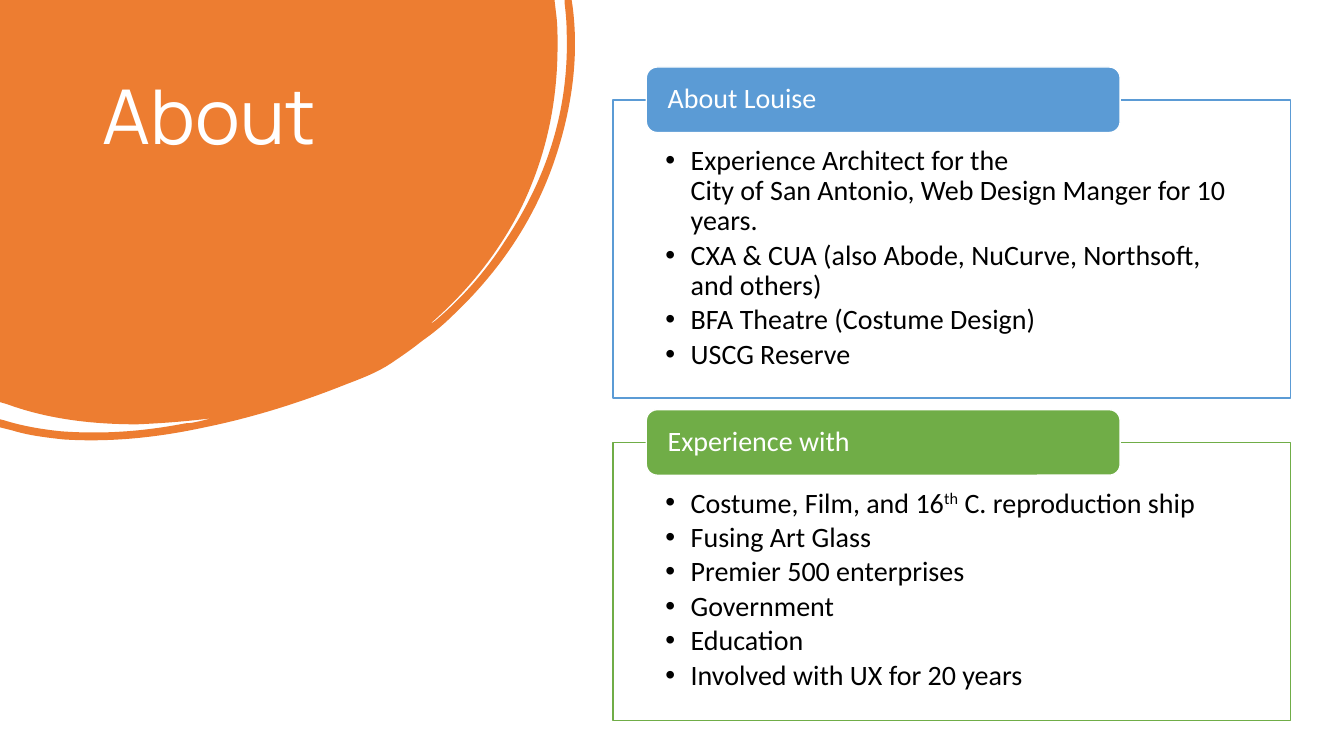
from lxml import etree
from pptx import Presentation
from pptx import util as u
from pptx.dml.color import RGBColor
from pptx.enum import shapes, text
from pptx.oxml import ns

WIDE, HIGH = u.Inches(13.33), u.Inches(7.5)
WHITE, BLACK, ORANGE, BLUE, GREEN = "FFFFFF", "000000", "ED7D31", "5B9BD5", "70AD47"
CARD_LEFT, CARD_WIDE = 45.61, 50.41
TAB_LEFT, TAB_WIDE, TAB_HIGH = 48.09, 35.26, 8.67

CARDS = [
    ("About Louise", BLUE, 13.2, 39.47, [
        "Experience Architect for the \vCity of San Antonio, Web Design Manger for 10 years.",
        "CXA & CUA (also Abode, NuCurve, Northsoft, and others)",
        "BFA Theatre (Costume Design)",
        "USCG Reserve",
    ]),
    ("Experience with", GREEN, 58.53, 36.8, [
        "Costume, Film, and 16^th^ C. reproduction ship",
        "Fusing Art Glass",
        "Premier 500 enterprises",
        "Government",
        "Education",
        "Involved with UX for 20 years",
    ]),
]

BLOB = [
    (0, 0), (5.5, 0), (5.52, 0.17),
    (5.53, 0.26, 5.53, 0.36, 5.53, 0.45),
    (5.53, 1.01, 5.42, 1.54, 5.18, 2.04),
    (4.96, 2.49, 4.65, 2.88, 4.27, 3.21),
    (4.29, 3.21, 4.3, 3.19, 4.32, 3.18),
    (4.59, 2.95, 4.82, 2.69, 5.01, 2.39),
    (5.43, 1.76, 5.65, 1.07, 5.62, 0.3),
    (5.62, 0.21, 5.61, 0.12, 5.6, 0.03),
    (5.6, 0), (5.67, 0), (5.68, 0.07),
    (5.74, 0.54, 5.68, 1.02, 5.53, 1.5),
    (5.33, 2.14, 4.97, 2.68, 4.48, 3.14),
    (4.39, 3.23, 4.29, 3.31, 4.19, 3.38),
    (4.09, 3.46, 3.99, 3.53, 3.87, 3.61),
    (3.75, 3.69, 3.6, 3.75, 3.44, 3.81),
    (2.99, 3.99, 2.52, 4.14, 2.03, 4.24),
    (1.57, 4.34, 1.1, 4.39, 0.63, 4.36),
    (0.45, 4.34, 0.28, 4.32, 0.12, 4.27),
    (0, 4.24), (0, 4.16), (0.04, 4.17),
    (0.23, 4.23, 0.42, 4.26, 0.61, 4.28),
    (1.03, 4.31, 1.43, 4.28, 1.84, 4.2),
    (1.89, 4.2, 1.93, 4.19, 1.98, 4.18),
    (2.02, 4.17, 2.06, 4.16, 2.1, 4.15),
    (1.86, 4.18, 1.61, 4.2, 1.36, 4.21),
    (0.92, 4.21, 0.48, 4.16, 0.07, 4.01),
    (0, 3.99),
]


def color(value):
    return RGBColor.from_string(value)


def box(left, top, wide, high):
    return [int(size * share / 100) for size, share in
            ((WIDE, left), (HIGH, top), (WIDE, wide), (HIGH, high))]


def place(shape, *shares):
    shape.left, shape.top, shape.width, shape.height = box(*shares)


def paint(shape, fill, line):
    shape.fill.solid()
    shape.fill.fore_color.rgb = color(fill)
    shape.line.color.rgb = color(line)
    shape.line.width = u.Pt(1)


def frame(shape, anchor, *insets):
    body = shape.text_frame
    body.word_wrap = True
    body.auto_size = text.MSO_AUTO_SIZE.NONE
    body.vertical_anchor = anchor
    (body.margin_left, body.margin_top,
     body.margin_right, body.margin_bottom) = map(u.Inches, insets)
    return body


def style(para, size, face, ink):
    para.alignment = text.PP_ALIGN.LEFT
    para.line_spacing = 0.9
    para.space_before = u.Pt(0)
    for run in para.runs:
        run.font.size = u.Pt(size)
        run.font.name = face
        run.font.color.rgb = color(ink)


def bend(line, point):
    line.tag = ns.qn("a:cubicBezTo")
    end = line[0]
    for x, y in (point[:2], point[2:4]):
        knot = etree.Element(ns.qn("a:pt"), x=str(u.Inches(x)), y=str(u.Inches(y)))
        end.addprevious(knot)


def add_blob(slide):
    ends = [tuple(map(u.Inches, point[-2:])) for point in BLOB]
    pen = slide.shapes.build_freeform(*ends[0], scale=1.0)
    pen.add_line_segments(ends[1:], close=True)
    blob = pen.convert_to_shape()
    blob.shadow.inherit = False
    paint(blob, ORANGE, ORANGE)
    blob.line.fill.background()
    lines = list(blob._element.iter(ns.qn("a:lnTo")))
    for line, point in zip(lines, BLOB[1:]):
        if len(point) == 6:
            bend(line, point)
    slide.shapes._spTree.insert(2, blob._element)


def add_title(slide):
    title = slide.shapes.title
    place(title, 6.9, 9.87, 26.41, 29.6)
    body = frame(title, text.MSO_ANCHOR.TOP, 0.1, 0.05, 0.1, 0.05)
    body.text = "About"
    style(body.paragraphs[0], 54, "Manrope", WHITE)


def add_point(para, item):
    head, *tail = item.split("^")
    para.text = head
    for bit in tail:
        para.add_run().text = bit
    style(para, 20, "Calibri", BLACK)
    para.space_after = u.Pt(3)
    props = para._p.get_or_add_pPr()
    props.set("marL", str(u.Inches(0.25)))
    props.set("indent", str(-u.Inches(0.25)))
    if tail:
        para.runs[1].font._element.set("baseline", "30000")


def add_list(holder, hue, top, high, items):
    place(holder, CARD_LEFT, top, CARD_WIDE, high)
    paint(holder, WHITE, hue)
    body = frame(holder, text.MSO_ANCHOR.TOP, 0.52, 0.46, 0.52, 0.16)
    for index, item in enumerate(items):
        add_point(body.add_paragraph() if index else body.paragraphs[0], item)


def add_tab(slide, label, hue, top):
    tab = slide.shapes.add_shape(
        shapes.MSO_SHAPE.ROUNDED_RECTANGLE,
        *box(TAB_LEFT, top - TAB_HIGH / 2, TAB_WIDE, TAB_HIGH))
    tab.shadow.inherit = False
    paint(tab, hue, WHITE)
    body = frame(tab, text.MSO_ANCHOR.MIDDLE, 0.18, 0, 0.18, 0)
    body.text = label
    style(body.paragraphs[0], 20, "Calibri", WHITE)


def main():
    deck = Presentation()
    deck.slide_width, deck.slide_height = WIDE, HIGH
    slide = deck.slides.add_slide(deck.slide_layouts.get_by_name("Two Content"))
    add_blob(slide)
    add_title(slide)
    for index, (label, hue, top, high, items) in enumerate(CARDS, 1):
        add_list(slide.placeholders[index], hue, top, high, items)
        add_tab(slide, label, hue, top)
    deck.save("out.pptx")


if __name__ == "__main__":
    main()
